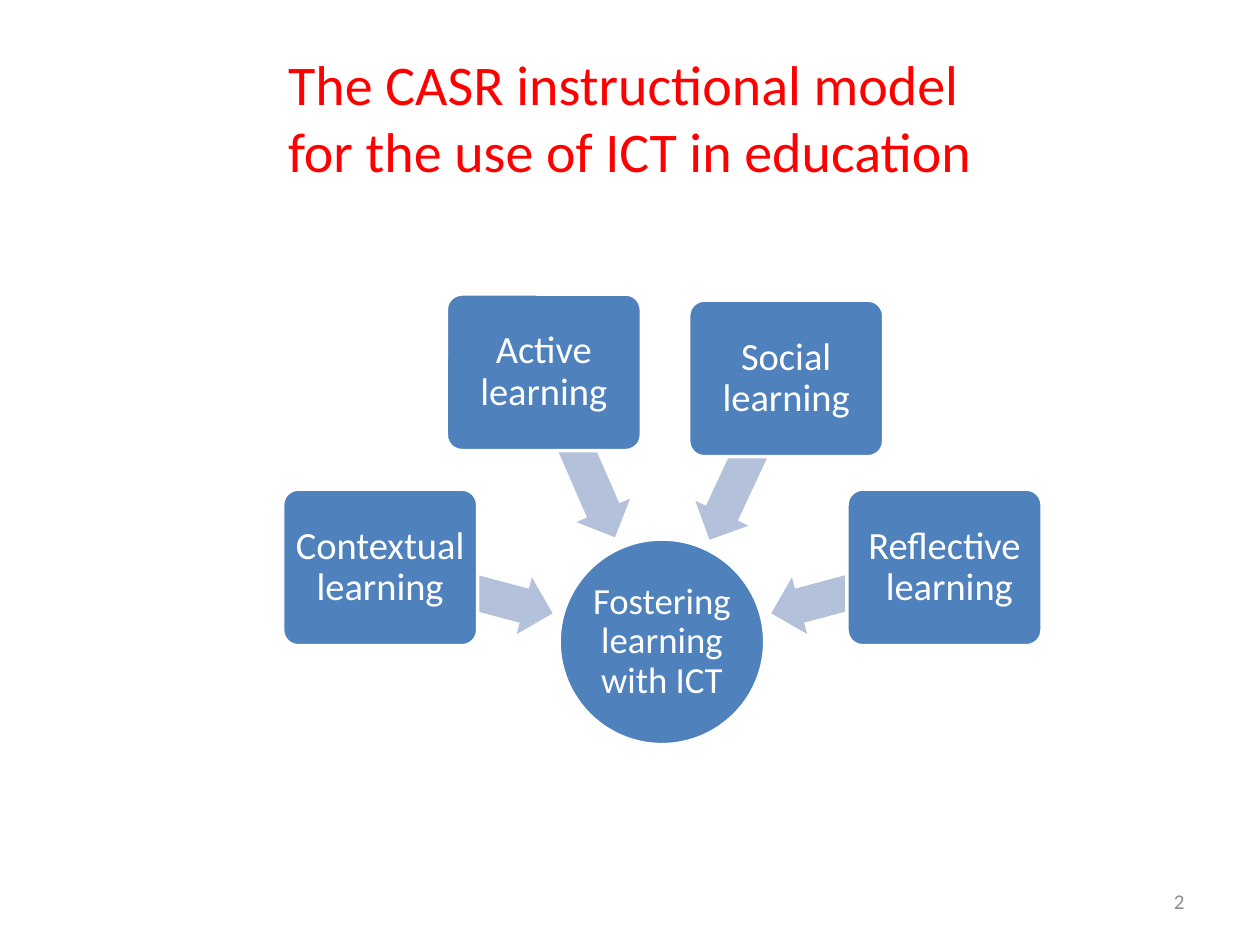
import pptx
import pptx.dml.color
import pptx.enum.shapes
import pptx.enum.text
import pptx.util

Pt = pptx.util.Pt
RGBColor = pptx.dml.color.RGBColor
SHAPE = pptx.enum.shapes.MSO_SHAPE
ALIGN = pptx.enum.text.PP_ALIGN
MIDDLE = pptx.enum.text.MSO_ANCHOR.MIDDLE

RED = RGBColor(0xFF, 0x00, 0x00)
BLUE = RGBColor(0x4F, 0x81, 0xBD)
PALE_BLUE = RGBColor(0xB3, 0xC1, 0xDB)
WHITE = RGBColor(0xFF, 0xFF, 0xFF)
GRAY = RGBColor(0x8C, 0x8C, 0x8C)

BOX_WIDTH, BOX_HEIGHT = 111.5, 89.5
ARROW_WIDTH, ARROW_HEIGHT = 102, 33.5
HUB_SIZE = 117.5


def write(part, text, size, color, align, inset=None):
    frame = part.text_frame
    frame.text = text
    frame.word_wrap = True
    frame.vertical_anchor = MIDDLE
    if inset is not None:
        for side in ("left", "top", "right", "bottom"):
            setattr(frame, f"margin_{side}", Pt(inset))
    paragraph = frame.paragraphs[0]
    paragraph.alignment = align
    for run in paragraph.runs:
        for key, value in {"name": "Calibri", "size": Pt(size)}.items():
            setattr(run.font, key, value)
        run.font.color.rgb = color
    return paragraph


def add_node(kind, left, top, width, height, text, size, inset):
    """Add a filled, white-edged shape with right-to-left centred text."""
    node = slide.shapes.add_shape(kind, Pt(left), Pt(top), Pt(width), Pt(height))
    node.shadow.inherit = False
    node.fill.solid()
    node.fill.fore_color.rgb = BLUE
    node.line.color.rgb = WHITE
    node.line.width = Pt(2)
    paragraph = write(node, text, size, WHITE, ALIGN.CENTER, inset)
    paragraph.line_spacing = 0.9
    paragraph._p.get_or_add_pPr().set("rtl", "1")
    return node


deck = pptx.Presentation()
deck.slide_width, deck.slide_height = Pt(720), Pt(540)
slide = deck.slides.add_slide(deck.slide_layouts[5])

title = slide.shapes.title
for key, value in {"left": 36, "top": 21.6, "width": 648, "height": 90}.items():
    setattr(title, key, Pt(value))
write(title, "The CASR instructional model \vfor the use of ICT in education",
      32, RED, ALIGN.CENTER)

add_node(SHAPE.OVAL, 319.5, 308, HUB_SIZE, HUB_SIZE,
         "Fostering learning with ICT", 21, 1)

# Text, box left and top, arrow left and top, arrow rotation
learning_modes = [
    ("Contextual learning", 161.5, 279.5, 215.5, 320.5, 195),
    ("Active learning", 255, 168, 280, 243.5, 246.4),
    ("Social learning", 393.5, 171.5, 376, 245.5, 295),
    ("Reflective learning ", 484, 279.5, 439, 320.5, 345),
]
for text, box_left, box_top, arrow_left, arrow_top, rotation in learning_modes:
    arrow = slide.shapes.add_shape(SHAPE.LEFT_ARROW, Pt(arrow_left), Pt(arrow_top),
                                   Pt(ARROW_WIDTH), Pt(ARROW_HEIGHT))
    arrow.shadow.inherit = False
    arrow.rotation = rotation
    arrow.adjustments[0], arrow.adjustments[1] = 0.6, 0.5
    arrow.fill.solid()
    arrow.fill.fore_color.rgb = PALE_BLUE
    arrow.line.fill.background()

    box = add_node(SHAPE.ROUNDED_RECTANGLE, box_left, box_top,
                   BOX_WIDTH, BOX_HEIGHT, text, 22, 3)
    box.adjustments[0] = 0.1

page_number = slide.shapes.add_textbox(Pt(516), Pt(500.5), Pt(168), Pt(28.75))
write(page_number, "2", 12, GRAY, ALIGN.RIGHT)

deck.save("out.pptx")
